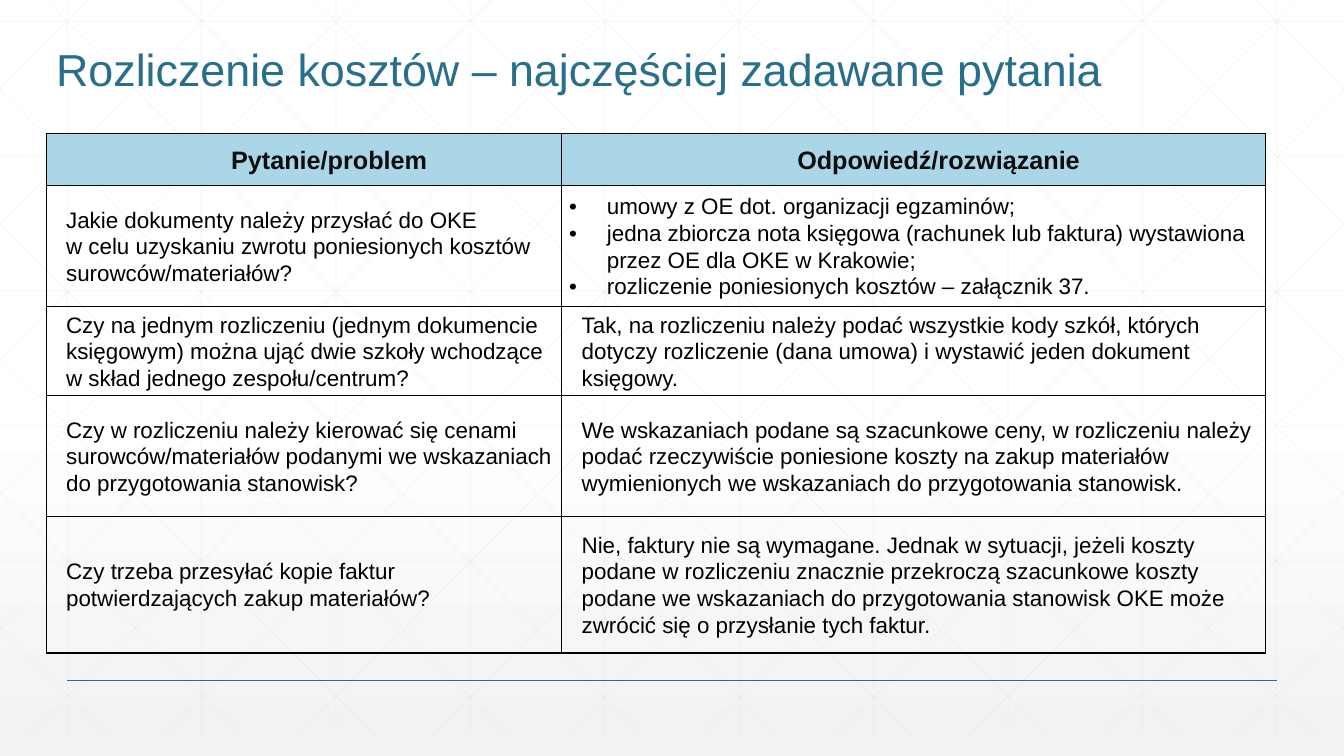
from copy import deepcopy
from dataclasses import dataclass

from lxml.etree import SubElement
from pptx import Presentation
from pptx.dml.color import RGBColor
from pptx.enum.shapes import MSO_CONNECTOR
from pptx.enum.text import MSO_ANCHOR, PP_ALIGN
from pptx.oxml import parse_xml
from pptx.oxml.ns import nsdecls, qn
from pptx.util import Pt

# Content
TITLE = "Rozliczenie kosztów – najczęściej zadawane pytania"
HEADS = ["Pytanie/problem", "Odpowiedź/rozwiązanie"]
# A list is a bulleted answer
ROWS = [
    ("Jakie dokumenty należy przysłać do OKE \n"
     "w celu uzyskaniu zwrotu poniesionych kosztów surowców/materiałów?",
     ["umowy z OE dot. organizacji egzaminów;",
      "jedna zbiorcza nota księgowa (rachunek lub faktura) wystawiona "
      "przez OE dla OKE w Krakowie;",
      "rozliczenie poniesionych kosztów – załącznik 37."]),
    ("Czy na jednym rozliczeniu (jednym dokumencie księgowym) można ująć "
     "dwie szkoły wchodzące w skład jednego zespołu/centrum?",
     "Tak, na rozliczeniu należy podać wszystkie kody szkół, których dotyczy "
     "rozliczenie (dana umowa) i wystawić jeden dokument księgowy."),
    ("Czy w rozliczeniu należy kierować się cenami surowców/materiałów "
     "podanymi we wskazaniach do przygotowania stanowisk?",
     "We wskazaniach podane są szacunkowe ceny, w rozliczeniu należy podać "
     "rzeczywiście poniesione koszty na zakup materiałów wymienionych "
     "we wskazaniach do przygotowania stanowisk."),
    ("Czy trzeba przesyłać kopie faktur potwierdzających zakup materiałów?",
     "Nie, faktury nie są wymagane. Jednak w sytuacji, jeżeli koszty podane "
     "w rozliczeniu znacznie przekroczą szacunkowe koszty podane "
     "we wskazaniach do przygotowania stanowisk OKE może zwrócić się "
     "o przysłanie tych faktur."),
]


@dataclass(frozen=True)
class Theme:
    font: str = "Arial"
    teal: str = "276F8B"
    head: str = "AAD6E7"
    dark: str = "0D0D0D"
    black: str = "000000"
    white: str = "FFFFFF"
    pale: str = "F2F2F2"
    mesh: str = "D9D9D9"
    title_pt: int = 32
    head_pt: int = 18
    body_pt: int = 16


T = Theme()

# Lengths in px, 96 to the inch
W, H = 1280, 720
TOP, BASE = -20, 700
STEP = 128
SLOPE = 720 / 716
COLS = [491, 670]
TALL = [50, 115, 85, 115, 130]


def px(n):
    return round(n * 9525)


def rgb(code):
    return RGBColor.from_string(code)


def add_line(slide, x1, y1, x2, y2, color, width, alpha=None):
    line = slide.shapes.add_connector(
        MSO_CONNECTOR.STRAIGHT, px(x1), px(y1), px(x2), px(y2))
    line.line.color.rgb = rgb(color)
    line.line.width = Pt(width)
    props = line._element.spPr
    if alpha:
        tint = props.find(".//" + qn("a:srgbClr"))
        SubElement(tint, qn("a:alpha"), val=str(alpha * 1000))
    SubElement(props, qn("a:effectLst"))


def add_runs(para, text, size, color, bold=False):
    for i, part in enumerate(text.split("\n")):
        if i:
            para.add_line_break()
        run = para.add_run()
        run.text = part
        run.font.name = T.font
        run.font.size = Pt(size)
        run.font.bold = bold
        run.font.color.rgb = rgb(color)
    for br in para._p.findall(qn("a:br")):
        br.append(deepcopy(run._r.rPr))


def paint_back(slide):
    fill = slide.background.fill
    fill.gradient()
    fill.gradient_angle = 270
    last = fill.gradient_stops[1]._gs
    last.addprevious(deepcopy(last))
    marks = [(0, T.white), (0.53, T.white), (1, T.pale)]
    for stop, (pos, color) in zip(fill.gradient_stops, marks):
        stop.position = pos
        stop.color.rgb = rgb(color)


def draw_mesh(slide):
    lines = [(x, TOP, x, BASE) for x in range(64, W, STEP)]
    lines += [(0, 20 + 128.6 * i, W, 20 + 128.6 * i) for i in range(6)]
    # Diagonals cut at the slide's sides, then mirrored
    slant = []
    for x in range(24, W, STEP):
        end = min(x + 716, W)
        slant.append((x, TOP, end, TOP + (end - x) * SLOPE))
    for x in range(611, 0, -127):
        slant.append((x, BASE, 0, BASE - x * SLOPE))
    lines += slant + [(W - a, b, W - c, d) for a, b, c, d in slant]
    for ends in lines:
        add_line(slide, *ends, T.mesh, 0.5, 25)


def add_title(slide):
    box = slide.shapes.add_textbox(px(44), px(12), px(1146), px(84))
    frame = box.text_frame
    frame.word_wrap = True
    frame.vertical_anchor = MSO_ANCHOR.BOTTOM
    para = frame.paragraphs[0]
    para.line_spacing = 0.9
    add_runs(para, TITLE, T.title_pt, T.teal)


def set_edges(cell):
    props = cell._tc.get_or_add_tcPr()
    for i, side in enumerate("LRTB"):
        props.insert(i, parse_xml(
            f'<a:ln{side} {nsdecls("a")} w="12700"><a:solidFill>'
            f'<a:srgbClr val="{T.black}"/></a:solidFill></a:ln{side}>'))


def fill_cell(cell, text, head):
    cell.vertical_anchor = MSO_ANCHOR.MIDDLE
    cell.margin_left = cell.margin_right = px(7)
    cell.margin_top = cell.margin_bottom = 0
    if head:
        cell.fill.solid()
        cell.fill.fore_color.rgb = rgb(T.head)
    else:
        cell.fill.background()
    set_edges(cell)
    dots = isinstance(text, list)
    left = 48 if head else 36 if dots else 12
    for i, item in enumerate(text if dots else [text]):
        frame = cell.text_frame
        para = frame.add_paragraph() if i else frame.paragraphs[0]
        para.line_spacing = 1.07
        props = para._p.get_or_add_pPr()
        props.set("marL", str(px(left)))
        props.set("indent", str(px(-left if dots else 0)))
        if dots:
            SubElement(props, qn("a:buFont"), typeface=T.font)
            SubElement(props, qn("a:buChar"), char="•")
        if head:
            para.alignment = PP_ALIGN.CENTER
            add_runs(para, item, T.head_pt, T.dark, True)
        else:
            add_runs(para, item, T.body_pt, T.black)


def add_grid(slide):
    rows = [HEADS, *ROWS]
    grid = slide.shapes.add_table(
        len(rows), len(COLS), px(44), px(127),
        px(sum(COLS)), px(sum(TALL))).table
    grid.horz_banding = False
    for col, wide in zip(grid.columns, COLS):
        col.width = px(wide)
    for r, (row, tall) in enumerate(zip(rows, TALL)):
        grid.rows[r].height = px(tall)
        for c, text in enumerate(row):
            fill_cell(grid.cell(r, c), text, r == 0)


def main():
    deck = Presentation()
    deck.slide_width, deck.slide_height = px(W), px(H)
    slide = deck.slides.add_slide(deck.slide_layouts[6])
    paint_back(slide)
    draw_mesh(slide)
    add_line(slide, 64, 648, 1216, 648, T.teal, 1)
    add_title(slide)
    add_grid(slide)
    deck.save("out.pptx")


if __name__ == "__main__":
    main()
